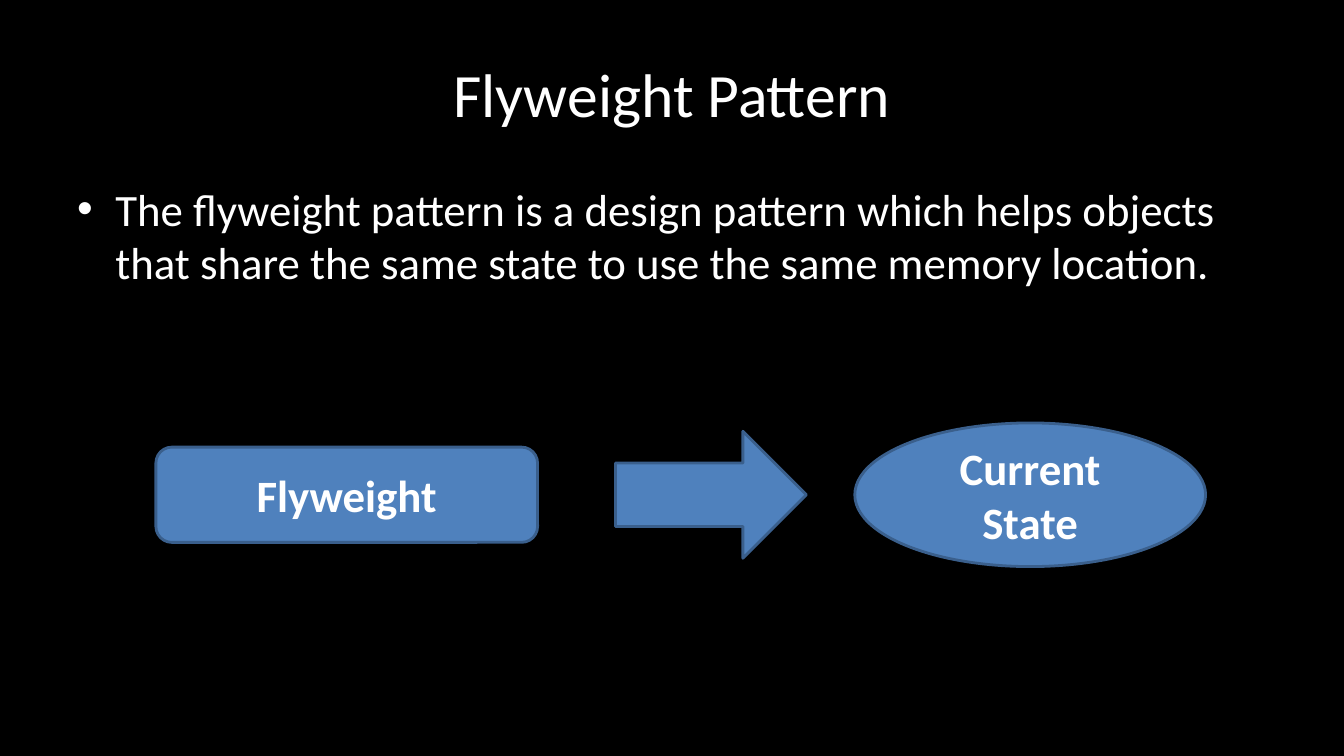
import pptx
import pptx.util
import pptx.dml.color
import pptx.enum.shapes
import pptx.enum.text
import pptx.oxml
import pptx.oxml.ns

Inches, Pt = pptx.util.Inches, pptx.util.Pt
SHAPE = pptx.enum.shapes.MSO_SHAPE
ALIGN = pptx.enum.text.PP_ALIGN
ANCHOR = pptx.enum.text.MSO_ANCHOR

COLORS = {"background": "000000", "text": "FFFFFF", "fill": "4F81BD", "outline": "3A5F8C"}
FONT = "Calibri"

# Grid of 100 columns by 100 rows over the slide
WIDTH, HEIGHT = 13.33, 7.5
COL, ROW = WIDTH / 100, HEIGHT / 100
MARGIN = 5
FLOW_MIDDLE = 65.45  # row on which the diagram is centred


def rgb(name):
    return pptx.dml.color.RGBColor.from_string(COLORS[name])


def cells(left, top, width, height):
    return Inches(left * COL), Inches(top * ROW), Inches(width * COL), Inches(height * ROW)


def write(tf, text, size, align, anchor, bold=False):
    tf.text = text
    tf.word_wrap = True
    tf.vertical_anchor = anchor
    p = tf.paragraphs[0]
    p.alignment = align
    font = p.runs[0].font
    font.name, font.size, font.bold = FONT, Pt(size), bold
    font.color.rgb = rgb("text")
    return p


def add_text(s, top, height, text, size, align, anchor):
    box = s.shapes.add_textbox(*cells(MARGIN, top, 100 - 2 * MARGIN, height))
    return write(box.text_frame, text, size, align, anchor)


def add_bullet(p, indent):
    pPr = p._p.get_or_add_pPr()
    pPr.set("marL", str(Inches(indent)))
    pPr.set("indent", str(-Inches(indent)))
    p.space_before = Pt(6.4)
    ns = pptx.oxml.ns.nsdecls("a")
    pPr.append(pptx.oxml.parse_xml(f'<a:buFont {ns} typeface="Arial"/>'))
    pPr.append(pptx.oxml.parse_xml(f'<a:buChar {ns} char="•"/>'))


def add_node(s, kind, left, width, height, text=None):
    top = FLOW_MIDDLE - height / 2
    sp = s.shapes.add_shape(kind, *cells(left, top, width, height))
    sp.shadow.inherit = False
    sp.fill.solid()
    sp.fill.fore_color.rgb = rgb("fill")
    sp.line.color.rgb = rgb("outline")
    sp.line.width = Pt(2)
    if text:
        write(sp.text_frame, text, 32, ALIGN.CENTER, ANCHOR.MIDDLE, bold=True)


def main():
    prs = pptx.Presentation()
    prs.slide_width, prs.slide_height = Inches(WIDTH), Inches(HEIGHT)
    s = prs.slides.add_slide(prs.slide_layouts[6])
    s.background.fill.solid()
    s.background.fill.fore_color.rgb = rgb("background")

    # Title and definition
    add_text(s, 4, 16.67, "Flyweight Pattern", 44, ALIGN.CENTER, ANCHOR.MIDDLE)
    definition = add_text(
        s, 23.33, 66,
        "The flyweight pattern is a design pattern which helps objects "
        "that share the same state to use the same memory location.",
        32, ALIGN.LEFT, ANCHOR.TOP)
    add_bullet(definition, 0.38)

    # Flyweight points to its state
    add_node(s, SHAPE.ROUNDED_RECTANGLE, 11.6, 28.4, 12.6, "Flyweight")
    add_node(s, SHAPE.OVAL, 63.6, 26.1, 19, "Current State")
    add_node(s, SHAPE.RIGHT_ARROW, 45.8, 14.2, 16.8)

    prs.save("out.pptx")


if __name__ == "__main__":
    main()
